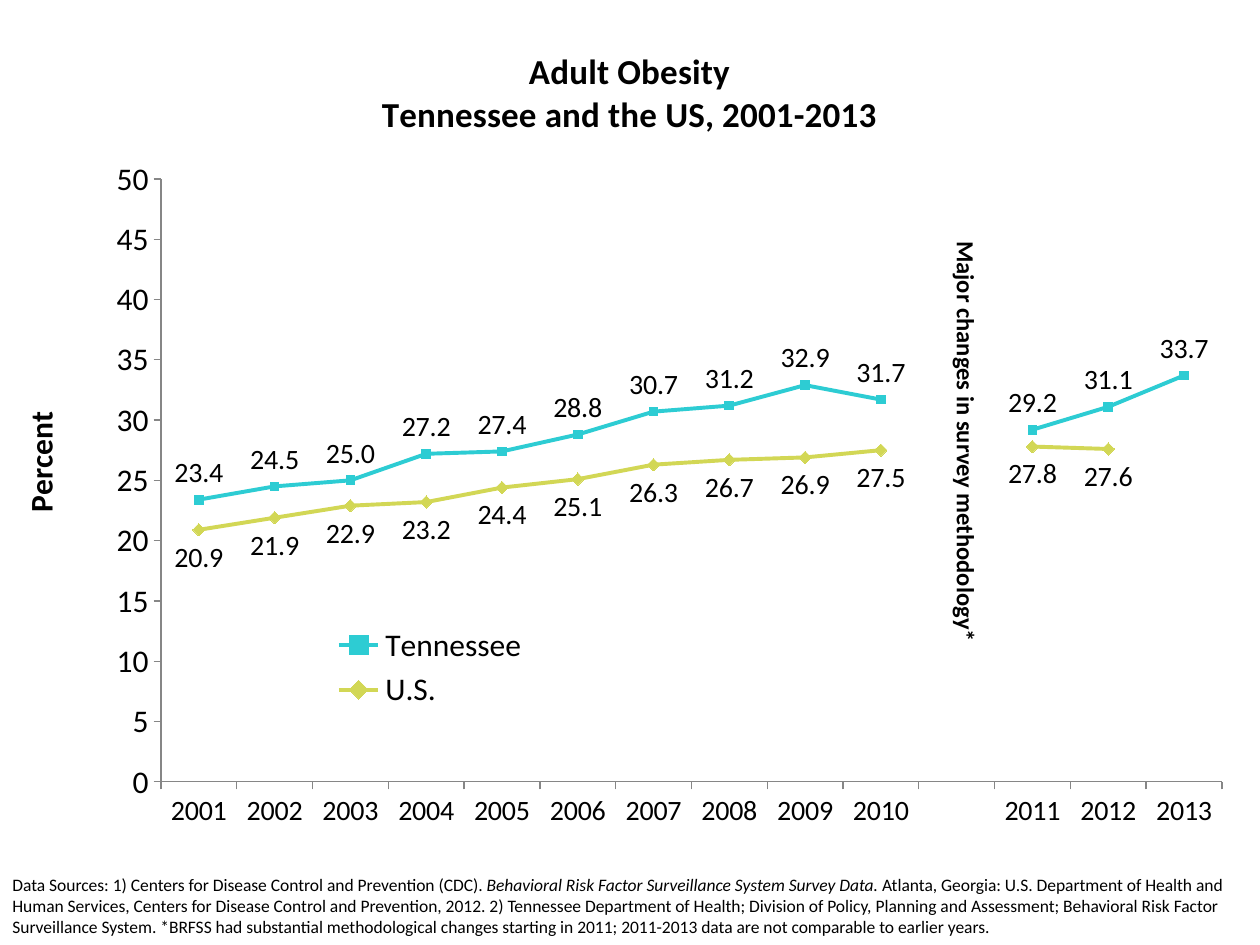
from lxml import etree
from pptx import Presentation
from pptx.chart.data import CategoryChartData
from pptx.dml.color import RGBColor
from pptx.enum.chart import (XL_CHART_TYPE, XL_LABEL_POSITION, XL_LEGEND_POSITION,
                             XL_MARKER_STYLE, XL_TICK_MARK)
from pptx.enum.text import MSO_AUTO_SIZE, PP_ALIGN
from pptx.oxml.ns import qn
from pptx.util import Emu, Pt

SCALE = 914400 / 126
FONT = "Calibri"
BLACK = RGBColor(0x00, 0x00, 0x00)
GRAY = RGBColor(0x86, 0x86, 0x86)
TEAL = RGBColor(0x2D, 0xCC, 0xD3)
LIME = RGBColor(0xD2, 0xD7, 0x55)

# Boxes on the slide in px: left, top, width, height
CHART = (13, 21, 1235, 823)
PLOT = (161, 179, 1061, 603)
LEGEND = (331, 620, 198, 95)
SOURCE = (0, 868, 1260, 77)
BREAK = (693, 420, 546, 43)
# Title corners in px: left, top
HEAD = (378, 44)
SIDE = (13, 406)

# The empty category separates the two survey methods
YEARS = [*map(str, range(2001, 2011)), "", *map(str, range(2011, 2014))]
STATE = [23.4, 24.5, 25, 27.2, 27.4, 28.8, 30.7, 31.2, 32.9, 31.7, None, 29.2, 31.1, 33.7]
NATION = [20.9, 21.9, 22.9, 23.2, 24.4, 25.1, 26.3, 26.7, 26.9, 27.5, None, 27.8, 27.6, None]

# Each line: name, values, colour, marker, marker size, label side
LINES = [
    ("Tennessee", STATE, TEAL, XL_MARKER_STYLE.SQUARE, 5, XL_LABEL_POSITION.ABOVE),
    ("U.S.", NATION, LIME, XL_MARKER_STYLE.DIAMOND, 7, XL_LABEL_POSITION.BELOW),
]

# Runs of the source note: text, italic
NOTE = [
    ("Data Sources: 1) Centers for Disease Control and Prevention (CDC).\u00a0", False),
    ("Behavioral Risk Factor Surveillance System Survey Data.", True),
    ("\u00a0Atlanta, Georgia: U.S. Department of Health and Human Services, Centers for "
     "Disease Control and Prevention, 2012. 2) Tennessee Department of Health; Division of "
     "Policy, Planning and Assessment; Behavioral Risk Factor Surveillance System. *BRFSS had "
     "substantial methodological changes starting in 2011; 2011-2013 data are not comparable "
     "to earlier years.", False),
]


def px(n):
    return Emu(round(n * SCALE))


def style(font, size, bold=False, italic=False):
    font.name, font.size = FONT, Pt(size)
    font.bold, font.italic = bold, italic
    font.color.rgb = BLACK


def write(frame, lines, size, align=None, bold=False):
    """Fill a frame with lines, each a list of (text, italic) runs."""
    for i, runs in enumerate(lines):
        par = frame.add_paragraph() if i else frame.paragraphs[0]
        par.alignment = align
        for text, italic in runs:
            run = par.add_run()
            run.text = text
            style(run.font, size, bold, italic)


def add_text(slide, box, runs, size, turn=0, **look):
    shape = slide.shapes.add_textbox(*map(px, box))
    shape.rotation = turn
    frame = shape.text_frame
    frame.word_wrap = True
    frame.auto_size = MSO_AUTO_SIZE.SHAPE_TO_FIT_TEXT
    write(frame, [runs], size, **look)


def place(part, index, box, inner=False):
    """Put a chart part at a slide box, stored as fractions of the chart."""
    for old in part.findall(qn("c:layout")):
        part.remove(old)
    layout = etree.Element(qn("c:layout"))
    part.insert(index, layout)
    manual = etree.SubElement(layout, qn("c:manualLayout"))
    left, top, wide, high = CHART
    starts, spans = (left, top, 0, 0), (wide, high, wide, high)
    rows = [("layoutTarget", "inner")] if inner else []
    rows += [("xMode", "edge"), ("yMode", "edge")]
    rows += [(tag, (n - start) / span)
             for tag, n, start, span in zip("xywh", box, starts, spans)]
    for tag, val in rows:
        etree.SubElement(manual, qn(f"c:{tag}")).set("val", str(val))


def set_title(title, lines, size, spot):
    write(title.text_frame, [[(line, False)] for line in lines], size, bold=True)
    place(title._element, 1, spot)


def style_axis(axis, size):
    axis.has_major_gridlines = False
    axis.major_tick_mark = XL_TICK_MARK.OUTSIDE
    axis.minor_tick_mark = XL_TICK_MARK.NONE
    axis.format.line.color.rgb = GRAY
    style(axis.tick_labels.font, size)


def style_line(series, color, mark, size, side):
    series.smooth = False
    series.format.line.color.rgb = color
    series.format.line.width = Pt(2.25)
    marker = series.marker
    marker.style, marker.size = mark, size
    marker.format.fill.solid()
    marker.format.fill.fore_color.rgb = color
    marker.format.line.color.rgb = color
    labels = series.data_labels
    labels.show_value = True
    labels.position = side
    labels.number_format = "0.0"
    labels.number_format_is_linked = False
    style(labels.font, 16)


def add_trend(slide):
    data = CategoryChartData(number_format="0.0")
    data.categories = YEARS
    for name, values, *_ in LINES:
        data.add_series(name, values)
    chart = slide.shapes.add_chart(XL_CHART_TYPE.LINE_MARKERS, *map(px, CHART), data).chart
    style(chart.font, 18)

    # Lines and plot area
    plot = chart.plots[0]
    plot.vary_by_categories = False
    for series, (_, _, *look) in zip(plot.series, LINES):
        style_line(series, *look)
    place(chart.element.find(".//" + qn("c:plotArea")), 0, PLOT, inner=True)

    # Axes
    style_axis(chart.category_axis, 16)
    axis = chart.value_axis
    style_axis(axis, 18)
    axis.minimum_scale, axis.maximum_scale, axis.major_unit = 0, 50, 5
    axis.tick_labels.number_format = "0"
    axis.tick_labels.number_format_is_linked = False

    # Titles
    set_title(axis.axis_title, ["Percent"], 18, SIDE)
    set_title(chart.chart_title, ["Adult Obesity", "Tennessee and the US, 2001-2013"], 20, HEAD)

    # Legend inside the plot
    chart.has_legend = True
    legend = chart.legend
    legend.position = XL_LEGEND_POSITION.RIGHT
    legend.include_in_layout = True
    style(legend.font, 18)
    place(legend._element, 1, LEGEND)


def main():
    deck = Presentation()
    deck.slide_width, deck.slide_height = px(1260), px(945)
    slide = deck.slides.add_slide(deck.slide_layouts[6])
    # Source note
    add_text(slide, SOURCE, NOTE, 10)
    # Trend chart
    add_trend(slide)
    # Upright note in the gap between the two surveys
    add_text(slide, BREAK, [("Major changes in survey methodology*", False)], 14,
             turn=90, align=PP_ALIGN.CENTER, bold=True)
    deck.save("out.pptx")


if __name__ == "__main__":
    main()
